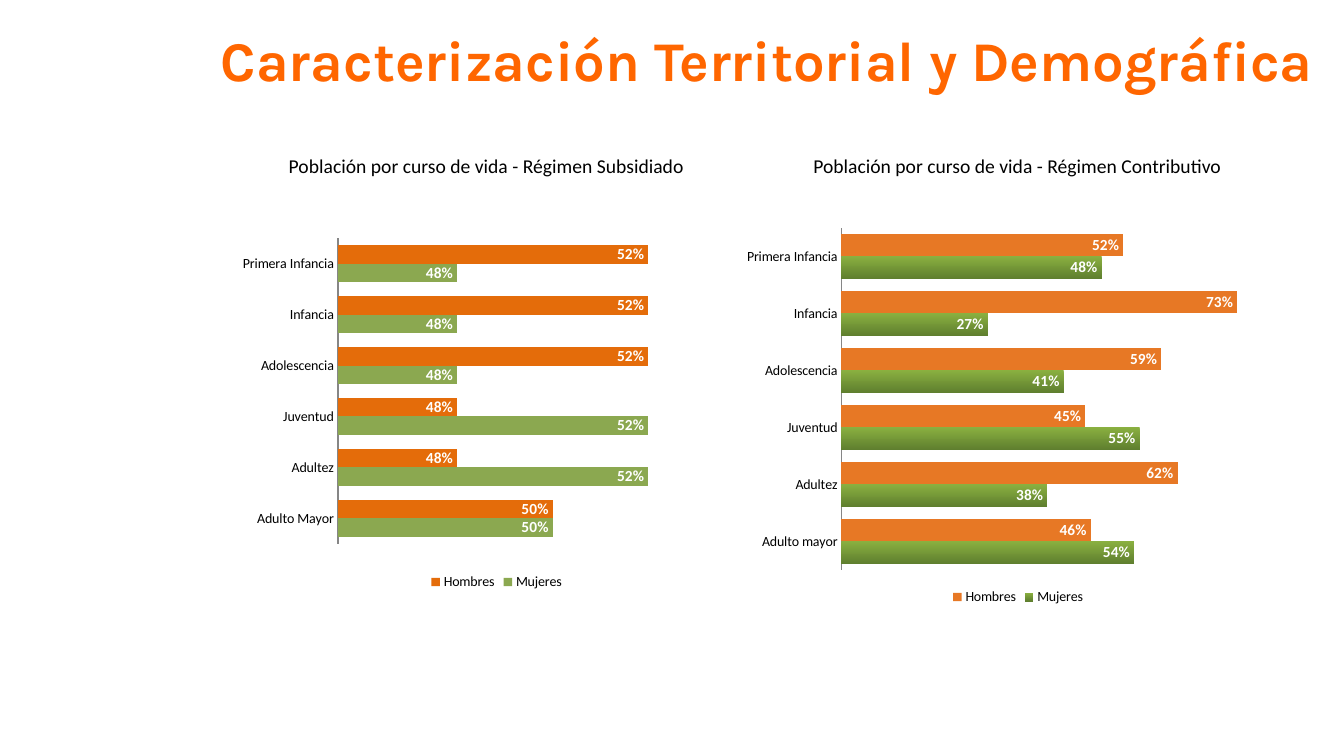
from lxml import etree
from pptx import Presentation
from pptx.chart.data import CategoryChartData
from pptx.dml.color import RGBColor
from pptx.enum.chart import XL_CHART_TYPE as ChartType
from pptx.enum.chart import XL_LABEL_POSITION as LabelPosition
from pptx.enum.chart import XL_LEGEND_POSITION as LegendPosition
from pptx.enum.chart import XL_TICK_MARK as TickMark
from pptx.enum.text import MSO_ANCHOR as Anchor
from pptx.enum.text import MSO_AUTO_SIZE as AutoSize
from pptx.enum.text import PP_ALIGN as Align
from pptx.oxml.ns import qn
from pptx.util import Pt

SCALE = 914400 / 100.8
ORANGE_TITLE = RGBColor(0xFF, 0x66, 0x00)
ORANGE_SUBSIDIZED = RGBColor(0xE4, 0x6C, 0x0A)
ORANGE_CONTRIBUTORY = RGBColor(0xE7, 0x78, 0x25)
GREEN = RGBColor(0x8B, 0xA8, 0x50)
GREEN_LIGHT = RGBColor(0x8A, 0xB0, 0x40)
GREEN_DARK = RGBColor(0x5F, 0x7F, 0x2F)
GRAY = RGBColor(0x86, 0x86, 0x86)
BLACK = RGBColor(0x00, 0x00, 0x00)
WHITE = RGBColor(0xFF, 0xFF, 0xFF)

STAGES = ["Adultez", "Juventud", "Adolescencia", "Infancia", "Primera Infancia"]
SUBSIDIZED = {
    "categories": ["Adulto Mayor"] + STAGES,
    "women": [0.50, 0.52, 0.52, 0.48, 0.48, 0.48],
    "men": [0.50, 0.48, 0.48, 0.52, 0.52, 0.52],
    "box": (212, 227, 524, 373),
    "plot": {"x": 0.24, "y": 0.03, "w": 0.73, "h": 0.82},
    "legend": {"x": 0.41, "y": 0.92},
    "legend_position": LegendPosition.TOP,
    "limits": {"minimum_scale": 0.455, "maximum_scale": 0.535},
    "gap": 76,
    "axis_width": 1.5,
    "men_color": ORANGE_SUBSIDIZED,
    "women_colors": [GREEN],
}
CONTRIBUTORY = {
    "categories": ["Adulto mayor"] + STAGES,
    "women": [0.54, 0.38, 0.55, 0.41, 0.27, 0.48],
    "men": [0.46, 0.62, 0.45, 0.59, 0.73, 0.52],
    "box": (747, 220, 539, 389),
    "plot": {"x": 0.17, "y": 0.02, "w": 0.81, "h": 0.88},
    "legend": None,
    "legend_position": LegendPosition.BOTTOM,
    "limits": {"minimum_scale": 0, "maximum_scale": 0.8},
    "gap": 56,
    "axis_width": 0.75,
    "men_color": ORANGE_CONTRIBUTORY,
    "women_colors": [GREEN_LIGHT, GREEN_DARK],
}


def px(value):
    return round(value * SCALE)


def apply(target, values):
    for name, value in values.items():
        setattr(target, name, value)


def format_font(font, color, **values):
    apply(font, values)
    font.color.rgb = color


def place(shape, box):
    apply(shape, dict(zip(("left", "top", "width", "height"), map(px, box))))


def write_line(shape, text, color, **font):
    frame = shape.text_frame
    apply(frame, {"word_wrap": True, "auto_size": AutoSize.NONE,
                  "vertical_anchor": Anchor.TOP})
    para = frame.paragraphs[0]
    para.alignment = Align.CENTER
    span = para.add_run()
    span.text = text
    format_font(span.font, color, **font)
    return para


def add_title(page, text):
    title = page.shapes.title
    place(title, (42, 20, 1302, 78))
    para = write_line(title, text, ORANGE_TITLE, name="Karla", size=Pt(40), bold=True)
    properties = para._p.get_or_add_pPr()
    properties.set("marL", str(px(151)))
    properties.set("indent", str(px(-3)))


def add_heading(page, text, left):
    box = page.shapes.add_textbox(px(left), px(149), px(469), px(34))
    write_line(box, text, BLACK, name="Calibri", size=Pt(14))


def set_layout(parent, anchor, fractions, inner=False):
    for previous in parent.findall(qn("c:layout")):
        parent.remove(previous)
    layout = etree.Element(qn("c:layout"))
    manual = etree.SubElement(layout, qn("c:manualLayout"))
    settings = {"layoutTarget": "inner"} if inner else {}
    settings.update({"xMode": "edge", "yMode": "edge"})
    settings.update(fractions)
    for tag, value in settings.items():
        etree.SubElement(manual, qn(f"c:{tag}")).set("val", str(value))
    if anchor is None:
        parent.insert(0, layout)
    else:
        anchor.addnext(layout)


def format_series(series, colors):
    fill = series.format.fill
    if len(colors) == 1:
        fill.solid()
        fill.fore_color.rgb = colors[0]
    else:
        fill.gradient()
        fill.gradient_angle = 270
        for stop, color in zip(fill.gradient_stops, colors):
            stop.color.rgb = color
    series.invert_if_negative = False
    labels = series.data_labels
    apply(labels, {"show_value": True, "number_format": "0%",
                   "number_format_is_linked": False,
                   "position": LabelPosition.INSIDE_END})
    format_font(labels.font, WHITE, name="Calibri", size=Pt(11), bold=True)


def format_axes(chart, regime):
    apply(chart.value_axis, {"visible": False, "has_major_gridlines": False,
                             **regime["limits"]})
    axis = chart.category_axis
    apply(axis, {"major_tick_mark": TickMark.NONE, "minor_tick_mark": TickMark.NONE,
                 "has_major_gridlines": False})
    axis.format.line.color.rgb = GRAY
    axis.format.line.width = Pt(regime["axis_width"])


def add_population_chart(page, regime):
    data = CategoryChartData(number_format="0%")
    data.categories = regime["categories"]
    data.add_series("Mujeres", regime["women"])
    data.add_series("Hombres", regime["men"])
    chart = page.shapes.add_chart(
        ChartType.BAR_CLUSTERED, *map(px, regime["box"]), data).chart
    apply(chart, {"has_title": False, "has_legend": True})
    format_font(chart.font, BLACK, name="Calibri", size=Pt(10))
    apply(chart.legend, {"position": regime["legend_position"],
                         "include_in_layout": False})
    plot = chart.plots[0]
    apply(plot, {"gap_width": regime["gap"], "overlap": 0,
                 "vary_by_categories": False})
    for series, colors in zip(plot.series, (regime["women_colors"], [regime["men_color"]])):
        format_series(series, colors)
    format_axes(chart, regime)
    root = chart._chartSpace
    set_layout(root.find(".//" + qn("c:plotArea")), None, regime["plot"], inner=True)
    if regime["legend"]:
        legend = root.find(".//" + qn("c:legend"))
        set_layout(legend, legend.find(qn("c:legendPos")), regime["legend"])


def main():
    deck = Presentation()
    apply(deck, {"slide_width": px(1344), "slide_height": px(756)})
    page = deck.slides.add_slide(deck.slide_layouts[5])
    add_title(page, "Caracterización Territorial y Demográfica")
    add_heading(page, "Población por curso de vida - Régimen Subsidiado", 252)
    add_heading(page, "Población por curso de vida - Régimen Contributivo", 783)
    for regime in (CONTRIBUTORY, SUBSIDIZED):
        add_population_chart(page, regime)
    deck.save("out.pptx")


if __name__ == "__main__":
    main()
